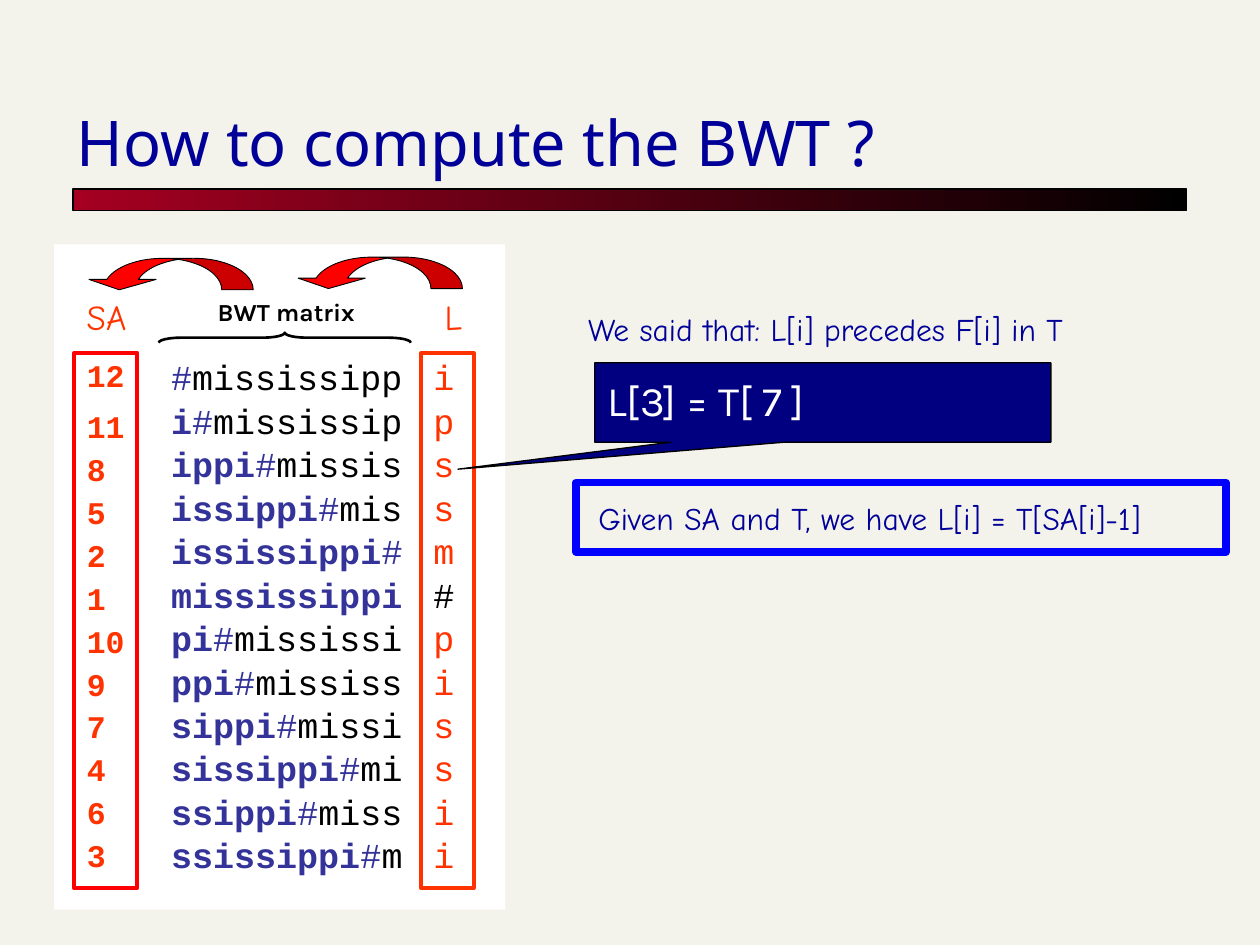
from lxml.etree import SubElement
from pptx import Presentation
from pptx.dml.color import RGBColor
from pptx.enum.shapes import MSO_SHAPE
from pptx.enum.text import MSO_ANCHOR
from pptx.oxml.ns import qn
from pptx.util import Inches, Pt

THEME = {
    "background": "F4F3EB", "panel": "FFFFFF", "ink": "000000",
    "navy": "000099", "suffix": "333399", "callout": "000080",
    "orange": "FF3300", "red": "FF0000", "blue": "0000FF",
    "bar": ("A50021", "000000"),
}
STYLES = {
    "title": {"name": "Noto Sans", "size": Pt(36)},
    "caption": {"name": "Karla", "size": Pt(14), "bold": True},
    "heading": {"name": "Comic Neue", "size": Pt(20)},
    "note": {"name": "Comic Neue", "size": Pt(18)},
    "callout": {"name": "Karla", "size": Pt(24)},
    "letters": {"name": "Courier New", "size": Pt(20), "bold": False},
    "suffix": {"name": "Courier New", "size": Pt(20), "bold": True},
    "index": {"name": "Courier New", "size": Pt(18), "bold": True},
}

TEXT = "mississippi#"
SUFFIX_ARRAY = [12, 11, 8, 5, 2, 1, 10, 9, 7, 4, 6, 3]
INDEX_SPACING = [0.95, 1.25] + [1.05] * 10
LETTER_SPACING = [0.95] * len(SUFFIX_ARRAY)

# words, style, colour, box
TITLE = ("How to compute the BWT ?", "title", "navy", (0.51, 0.89, 8.5, 0.58))
LABELS = [
    ("BWT matrix", "caption", "ink", (1.63, 2.31, 1.36, 0.33)),
    ("L", "heading", "orange", (3.43, 2.3, 0.35, 0.43)),
    ("SA", "heading", "orange", (0.59, 2.3, 0.6, 0.43)),
    ("We said that: L[i] precedes F[i] in T", "note", "navy", (4.57, 2.41, 4.41, 0.4)),
    ("Given SA and T, we have L[i] = T[SA[i]-1]", "note", "navy", (4.65, 3.91, 5.05, 0.4)),
]
CALLOUT = "L[3] = T[ 7 ]"
# box, line colour, line width
FRAMES = [
    ((3.34, 2.8, 0.42, 4.25), "orange", 2),
    ((0.59, 2.8, 0.5, 4.25), "red", 2.25),
    ((4.57, 3.83, 5.16, 0.55), "blue", 4.25),
]
ARROW_CORNERS = [(2.34, 2.04), (0.68, 2.05)]


def colour(name):
    return RGBColor.from_string(THEME[name])


def apply(target, values):
    for attribute, value in values.items():
        setattr(target, attribute, value)


def add_outline(slide, preset, box, fill=None, line=None, width=0.75, adjustments=()):
    shape = slide.shapes.add_shape(preset, *map(Inches, box))
    shape.shadow.inherit = False
    for position, value in enumerate(adjustments):
        shape.adjustments[position] = value
    if fill:
        shape.fill.solid()
        shape.fill.fore_color.rgb = colour(fill)
    else:
        shape.fill.background()
    if line:
        shape.line.color.rgb = colour(line)
        shape.line.width = Pt(width)
    else:
        shape.line.fill.background()
    return shape


def add_run(paragraph, words, style, ink):
    run = paragraph.add_run()
    run.text = words
    apply(run.font, STYLES[style])
    run.font.color.rgb = colour(ink)


def add_label(slide, words, style, ink, box):
    frame = slide.shapes.add_textbox(*map(Inches, box)).text_frame
    frame.word_wrap = False
    add_run(frame.paragraphs[0], words, style, ink)
    return frame


def add_column(slide, box, rows, spacings):
    """Stack one paragraph per row; each row lists its (words, style, colour) runs."""
    frame = slide.shapes.add_textbox(*map(Inches, box)).text_frame
    frame.word_wrap = True
    for number, (row, spacing) in enumerate(zip(rows, spacings)):
        paragraph = frame.add_paragraph() if number else frame.paragraphs[0]
        apply(paragraph, {"line_spacing": spacing, "space_before": Pt(0)})
        # Space before is a tenth of the line, which needs a percentage.
        before = paragraph._p.pPr.find(qn("a:spcBef"))
        before.clear()
        SubElement(before, qn("a:spcPct"), val="10000")
        for run in row:
            add_run(paragraph, *run)


def matrix_row(start):
    """Split the rotation at start, without its last letter, into coloured runs."""
    rotation = (TEXT[start - 1:] + TEXT[:start - 1])[:-1]
    suffix, mark, rest = rotation.partition("#")
    runs = [(suffix, "suffix", "suffix"), (mark, "letters", "suffix"),
            (rest, "letters", "ink")]
    return [run for run in runs if run[0]]


def last_letter_row(start):
    letter = TEXT[start - 2]
    return [(letter, "letters", "ink" if letter == "#" else "orange")]


def main():
    deck = Presentation()
    apply(deck, {"slide_width": Inches(10), "slide_height": Inches(7.5)})
    slide = deck.slides.add_slide(deck.slide_layouts[6])
    slide.background.fill.solid()
    slide.background.fill.fore_color.rgb = colour("background")

    bar = add_outline(slide, MSO_SHAPE.RECTANGLE, (0.58, 1.5, 8.84, 0.17), line="ink")
    bar.fill.gradient()
    bar.fill.gradient_angle = 0
    for stop, shade in zip(bar.fill.gradient_stops, THEME["bar"]):
        stop.color.rgb = RGBColor.from_string(shade)

    add_outline(slide, MSO_SHAPE.RECTANGLE, (0.43, 1.94, 3.58, 5.28), fill="panel")
    brace = add_outline(slide, MSO_SHAPE.LEFT_BRACE, (2.22, 1.68, 0.08, 2),
                        line="ink", width=1.5, adjustments=(2.17, 0.5))
    brace.rotation = 90
    for left, top in ARROW_CORNERS:
        arrow = add_outline(slide, MSO_SHAPE.CURVED_UP_ARROW, (left, top, 1.33, 0.25),
                            "red", "ink", 0.5, (1.07, 2.13, 0.33))
        arrow.rotation = 180

    title = add_label(slide, *TITLE)
    apply(title, {"word_wrap": True, "vertical_anchor": MSO_ANCHOR.BOTTOM})

    add_column(slide, (1.26, 2.8, 2.36, 4.26), map(matrix_row, SUFFIX_ARRAY), LETTER_SPACING)
    add_column(slide, (3.34, 2.8, 0.42, 4.27), map(last_letter_row, SUFFIX_ARRAY),
               LETTER_SPACING)
    index_rows = [[(str(start), "index", "orange")] for start in SUFFIX_ARRAY]
    add_column(slide, (0.59, 2.8, 1.08, 4.24), index_rows, INDEX_SPACING)

    for box, line, width in FRAMES:
        add_outline(slide, MSO_SHAPE.RECTANGLE, box, line=line, width=width)

    callout = add_outline(slide, MSO_SHAPE.RECTANGULAR_CALLOUT, (4.72, 2.88, 3.62, 0.63),
                          "callout", "ink", adjustments=(-0.8, 0.84)).text_frame
    callout.vertical_anchor = MSO_ANCHOR.TOP
    apply(callout.paragraphs[0], {"line_spacing": 1.1, "alignment": 1})
    add_run(callout.paragraphs[0], CALLOUT, "callout", "panel")

    for label in LABELS:
        add_label(slide, *label)
    deck.save("out.pptx")


if __name__ == "__main__":
    main()
